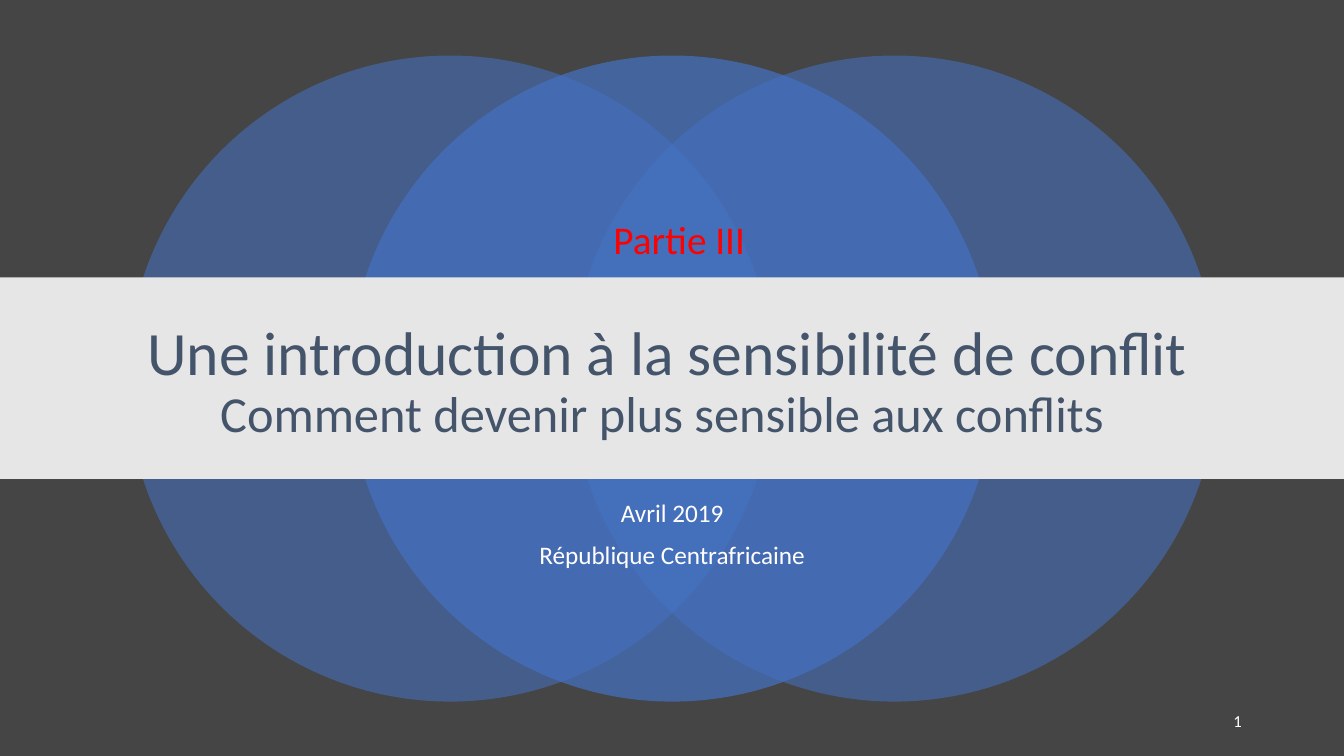
from lxml.etree import SubElement
from pptx import Presentation
from pptx.dml.color import RGBColor
from pptx.enum.shapes import MSO_SHAPE as Shape
from pptx.enum.text import MSO_ANCHOR as Anchor, MSO_AUTO_SIZE as AutoSize, PP_ALIGN as Align
from pptx.oxml.ns import qn
from pptx.util import Cm, Pt

COLORS = {
    "background": "454545",
    "circle": "4472C4",
    "band": "E7E6E6",
    "title": "44546A",
    "light": "FFFFFF",
    "part": "FF0000",
}
WIDTH, HEIGHT = 33.87, 19.05


class TitleSlide:
    font = "Calibri"

    def __init__(self, prs):
        self.slide = prs.slides.add_slide(prs.slide_layouts[0])
        fill = self.slide.background.fill
        fill.solid()
        fill.fore_color.rgb = self.color("background")

    def color(self, name):
        return RGBColor.from_string(COLORS[name])

    def block(self, shapes, kind, box, color, opacity=100):
        block = shapes.add_shape(kind, *map(Cm, box))
        block.shadow.inherit = False
        block.fill.solid()
        block.fill.fore_color.rgb = self.color(color)
        block.line.fill.background()
        if opacity < 100:
            tint = block.element.find(".//" + qn("a:srgbClr"))
            SubElement(tint, qn("a:alpha"), val=str(opacity * 1000))

    def circles(self, left, top, size, step):
        group = self.slide.shapes.add_group_shape()
        for position, opacity in ((0, 55), (2, 55), (1, 70)):
            box = (left + position * step, top, size, size)
            self.block(group.shapes, Shape.OVAL, box, "circle", opacity)

    def band(self, top, height):
        self.block(self.slide.shapes, Shape.RECTANGLE, (0, top, WIDTH, height), "band")

    def fill_text(self, holder, text, color, sizes, align, anchor):
        frame = holder.text_frame
        frame.text = text
        frame.word_wrap = True
        frame.auto_size = AutoSize.NONE
        frame.vertical_anchor = anchor
        for paragraph in frame.paragraphs:
            paragraph.alignment = align
            for run, size in zip(paragraph.runs, sizes):
                run.font.name = self.font
                run.font.size = Pt(size)
                run.font.color.rgb = self.color(color)
        return frame

    def placeholder(self, index, box, text, color, sizes, anchor, before):
        holder = self.slide.placeholders[index]
        holder.left, holder.top, holder.width, holder.height = map(Cm, box)
        holder.element.getparent().append(holder.element)
        frame = self.fill_text(holder, text, color, sizes, Align.CENTER, anchor)
        for paragraph in frame.paragraphs:
            paragraph.line_spacing = 0.9
            paragraph.space_before = Pt(before)

    def label(self, box, text, color, size, align, anchor=Anchor.TOP):
        holder = self.slide.shapes.add_textbox(*map(Cm, box))
        return self.fill_text(holder, text, color, [size], align, anchor)


def main():
    prs = Presentation()
    prs.slide_width, prs.slide_height = Cm(WIDTH), Cm(HEIGHT)
    cover = TitleSlide(prs)
    cover.circles(left=3.2, top=1.4, size=16.28, step=5.6)
    cover.placeholder(1, (4.24, 12.5, 25.4, 2.1), "Avril 2019\nRépublique Centrafricaine",
                      "light", [18], Anchor.TOP, before=10)
    cover.band(top=6.99, height=5.08)
    cover.placeholder(0, (2.95, 7.72, 27.76, 3.84),
                      "Une introduction à la sensibilité de conflit\v"
                      "Comment devenir plus sensible aux conflits ",
                      "title", [44, 36], Anchor.MIDDLE, before=0)
    number = cover.label((23.93, 17.65, 7.62, 1.02), "1", "light", 12,
                         Align.RIGHT, Anchor.MIDDLE)
    number.paragraphs[0].space_after = Pt(6)
    part = cover.label((15.21, 5.31, 9.37, 1.45), "Partie III", "part", 28, Align.LEFT)
    part.auto_size = AutoSize.SHAPE_TO_FIT_TEXT
    prs.save("out.pptx")


if __name__ == "__main__":
    main()
